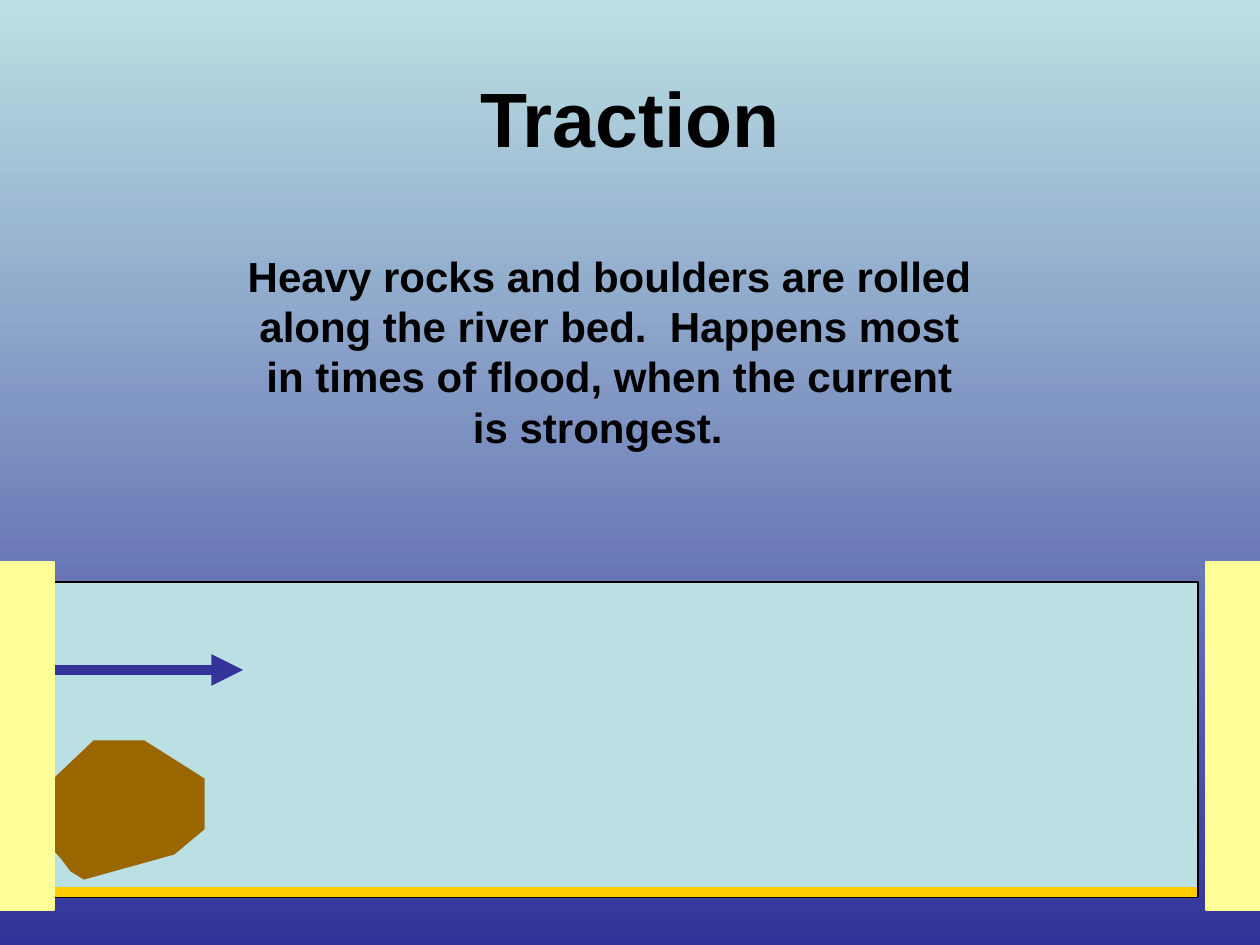
from dataclasses import dataclass

from lxml import etree
from pptx import Presentation
from pptx import util as u
from pptx.dml.color import RGBColor
from pptx.enum import shapes, text
from pptx.oxml.ns import qn

PX = 914400 // 126  # EMU per px


@dataclass(frozen=True)
class Theme:
    font: str = "Arial"
    ink: str = "000000"
    water: str = "BBE0E3"
    deep: str = "333399"
    bed: str = "FFCC00"
    rock: str = "996600"
    bank: str = "FFFF99"
    title_size: float = 44
    body_size: float = 24
    line_pitch: float = 28.8
    thin: float = 0.75
    thick: float = 6


@dataclass(frozen=True)
class Box:
    left: int
    top: int
    width: int
    height: int

    def emu(self) -> list[int]:
        return [v * PX for v in (self.left, self.top, self.width, self.height)]


@dataclass(frozen=True)
class Stroke:
    start: tuple[int, int]
    end: tuple[int, int]
    color: str
    arrow: bool = False


THEME = Theme()
TITLE = Box(63, 38, 1134, 157)
EXPLANATION = Box(233, 244, 753, 214)
RIVER = Box(54, 582, 1144, 315)
BANKS = [Box(left, 562, 54, 348) for left in (0, 1206)]
BED = Stroke((53, 892), (1197, 892), THEME.bed)
CURRENT = Stroke((54, 670), (243, 670), THEME.deep, arrow=True)
BOULDER = [(71, 871), (62, 859), (54, 850), (54, 779), (94, 741), (144, 741),
           (204, 779), (204, 829), (174, 854), (84, 879)]


def rgb(color: str) -> RGBColor:
    return RGBColor.from_string(color)


def paint(shape, fill: str, outline: str) -> None:
    shape.shadow.inherit = False
    shape.fill.solid()
    shape.fill.fore_color.rgb = rgb(fill)
    shape.line.color.rgb = rgb(outline)
    shape.line.width = u.Pt(THEME.thin)


def add_block(slide, box: Box, fill: str, outline: str) -> None:
    block = slide.shapes.add_shape(shapes.MSO_SHAPE.RECTANGLE, *box.emu())
    paint(block, fill, outline)


def add_stroke(slide, stroke: Stroke) -> None:
    ends = [v * PX for v in stroke.start + stroke.end]
    connector = slide.shapes.add_connector(shapes.MSO_CONNECTOR.STRAIGHT, *ends)
    connector.line.color.rgb = rgb(stroke.color)
    connector.line.width = u.Pt(THEME.thick)
    if stroke.arrow:
        etree.SubElement(connector.line._ln, qn("a:tailEnd"), type="triangle")
    etree.SubElement(connector._element.spPr, qn("a:effectLst"))


def write(shape, words: str, size: float, anchor) -> None:
    frame = shape.text_frame
    frame.word_wrap = True
    frame.vertical_anchor = anchor
    paragraph = frame.paragraphs[0]
    paragraph.text = words
    paragraph.alignment = text.PP_ALIGN.CENTER
    font = paragraph.runs[0].font
    for name, value in {"name": THEME.font, "size": u.Pt(size), "bold": True}.items():
        setattr(font, name, value)
    font.color.rgb = rgb(THEME.ink)


def main() -> None:
    deck = Presentation()
    deck.slide_width, deck.slide_height = 1260 * PX, 945 * PX
    slide = deck.slides.add_slide(deck.slide_layouts[5])

    # Background: light at the top, deep at the bottom
    backdrop = slide.background.fill
    backdrop.gradient()
    backdrop.gradient_angle = 270
    for stop, color in zip(backdrop.gradient_stops, (THEME.water, THEME.deep)):
        stop.color.rgb = rgb(color)

    # Title
    title = slide.shapes.title
    title.left, title.top, title.width, title.height = TITLE.emu()
    write(title, "Traction", THEME.title_size, text.MSO_ANCHOR.MIDDLE)

    # River, its bed and the rolling boulder
    add_block(slide, RIVER, THEME.water, THEME.ink)
    add_stroke(slide, BED)
    outline = slide.shapes.build_freeform(*BOULDER[0], scale=PX)
    outline.add_line_segments(BOULDER[1:], close=True)
    paint(outline.convert_to_shape(), THEME.rock, THEME.rock)

    # Explanation
    explanation = slide.shapes.add_textbox(*EXPLANATION.emu())
    write(explanation,
          "Heavy rocks and boulders are rolled along the river bed.  Happens most "
          "in times of flood, when the current is strongest.  ",
          THEME.body_size, text.MSO_ANCHOR.TOP)
    explanation.text_frame.paragraphs[0].line_spacing = u.Pt(THEME.line_pitch)

    # Current and the two banks
    add_stroke(slide, CURRENT)
    for bank in BANKS:
        add_block(slide, bank, THEME.bank, THEME.bank)

    deck.save("out.pptx")


if __name__ == "__main__":
    main()
